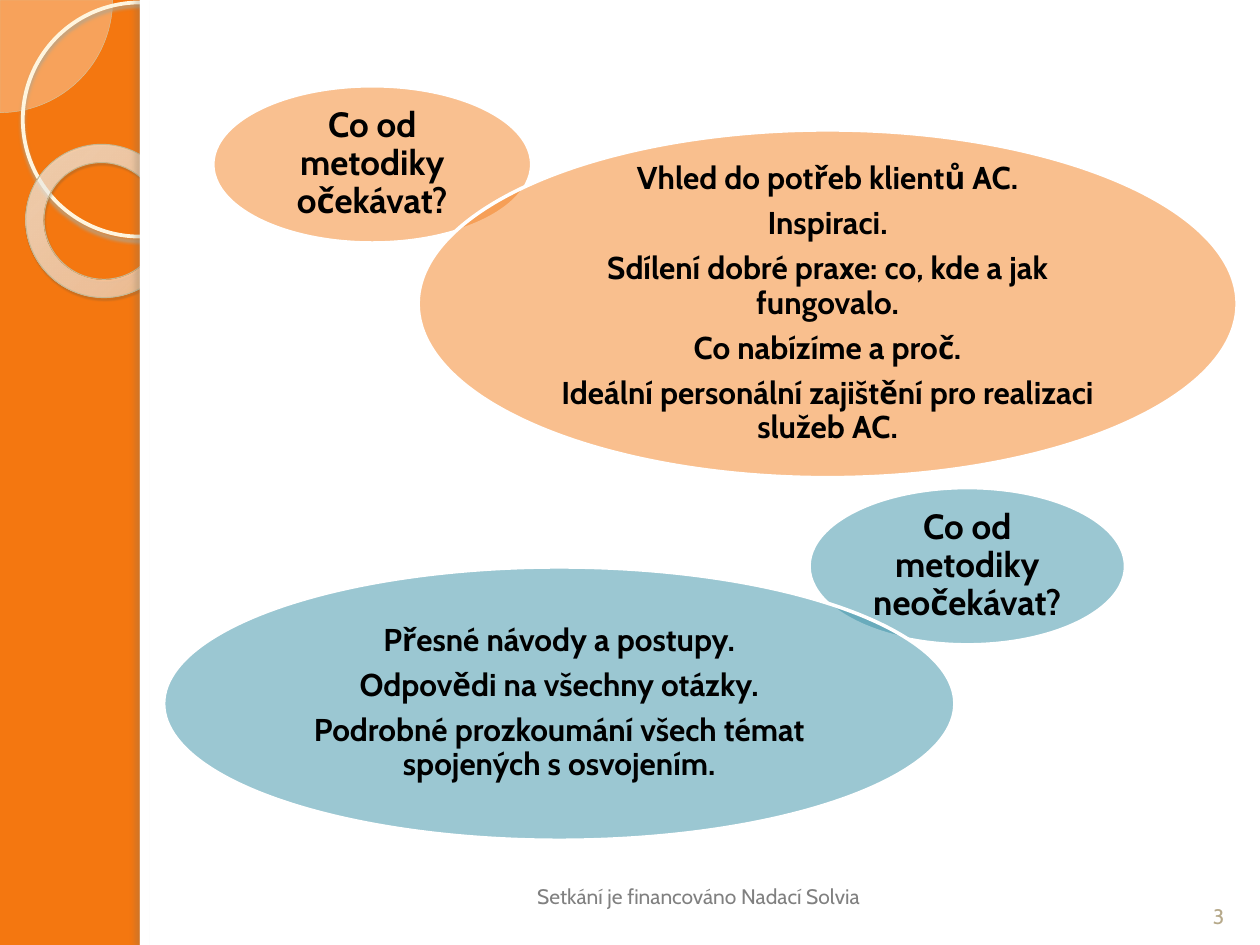
"""Build a slide with two question bubbles and their answers."""
from lxml import etree
from pptx import Presentation
from pptx.dml import color as dml
from pptx.enum import shapes, text
from pptx.oxml import ns
from pptx.util import Cm, Pt

KIND = shapes.MSO_SHAPE


def rgb(code):
    return dml.RGBColor.from_string(code)


def node(parent, tag, **attrs):
    return etree.SubElement(parent, ns.qn("a:" + tag), {k: str(v) for k, v in attrs.items()})


def tint(parent, code, alpha):
    node(node(parent, "srgbClr", val=code), "alpha", val=alpha * 1000)


class Deck:
    def __init__(self):
        self.font = "Cabin"
        self.prs = Presentation()
        self.prs.slide_width, self.prs.slide_height = Cm(25.4), Cm(19.05)
        self.slide = self.prs.slides.add_slide(self.prs.slide_layouts[6])

    def back(self, code):
        fill = self.slide.background.fill
        fill.solid()
        fill.fore_color.rgb = rgb(code)

    def shape(self, kind, box, fill=None, alpha=100, line=None, width=1):
        item = self.slide.shapes.add_shape(kind, *map(Cm, box))
        item.shadow.inherit = False
        if fill:
            item.fill.solid()
            item.fill.fore_color.rgb = rgb(fill)
            if alpha < 100:
                solid = item._element.spPr.find(ns.qn("a:solidFill"))
                node(solid[0], "alpha", val=alpha * 1000)
        else:
            item.fill.background()
        if line:
            item.line.color.rgb = rgb(line)
            item.line.width = Pt(width)
        else:
            item.line.fill.background()
        return item

    def shade(self, item, code, alpha, blur, dist, angle):
        effects = item._element.spPr.find(ns.qn("a:effectLst"))
        shadow = node(effects, "outerShdw", blurRad=Pt(blur), dist=Pt(dist),
                      dir=angle * 60000, algn="ctr", rotWithShape=0)
        tint(shadow, code, alpha)

    def glow(self, item, stops, rect):
        props = item._element.spPr
        grad = etree.Element(ns.qn("a:gradFill"), rotWithShape="1")
        ramp = node(grad, "gsLst")
        for pos, code, alpha in stops:
            tint(node(ramp, "gs", pos=pos * 1000), code, alpha)
        round_fill = node(grad, "path", path="circle")
        node(round_fill, "fillToRect", **{k: v * 1000 for k, v in zip("ltrb", rect)})
        props.replace(props.find(ns.qn("a:solidFill")), grad)

    def label(self, frame, lines, size, code, bold=False):
        frame.word_wrap = True
        for i, line in enumerate(lines):
            par = frame.paragraphs[0] if i == 0 else frame.add_paragraph()
            par.text = line
            par.alignment = text.PP_ALIGN.CENTER
            font = par.font
            font.name, font.size, font.bold = self.font, Pt(size), bold
            font.color.rgb = rgb(code)

    def bubble(self, box, fill, size, lines):
        item = self.shape(KIND.OVAL, box, fill, 50, "FFFFFF", 2)
        frame = item.text_frame
        frame.margin_left = frame.margin_right = frame.margin_top = frame.margin_bottom = 0
        frame.vertical_anchor = text.MSO_ANCHOR.MIDDLE
        self.label(frame, lines, size, "000000", True)
        for par in frame.paragraphs:
            par.line_spacing = 0.9
            par.space_after = Pt(size * 0.35)

    def note(self, box, line, code):
        frame = self.slide.shapes.add_textbox(*map(Cm, box)).text_frame
        frame.vertical_anchor = text.MSO_ANCHOR.BOTTOM
        self.label(frame, [line], 12, code)

    def decor(self):
        pie = self.shape(KIND.PIE, (-2.27, -2.27, 4.54, 4.54), "FEFAF4", 33, "D3C39F", 0.25)
        pie.adjustments[0], pie.adjustments[1] = 0, 54
        hoop = self.shape(KIND.OVAL, (0.46, 0.05, 4.72, 4.72), line="FFF5DE", width=2.15)
        self.shade(hoop, "B0A68F", 85, 2, 2, 90)
        ring = self.shape(KIND.DONUT, (0.51, 2.92, 3.12, 3.07), "FFFCF6", line="C7B893", width=0.58)
        ring.adjustments[0] = 0.12
        ring.rotation = 38.6
        stops = [(0, "FFFCF6", 70), (70, "FFFEFB", 55), (100, "F0D28E", 60)]
        self.glow(ring, stops, (-408, -50, 508, 150))
        self.shade(ring, "5A5444", 35, 1, 1.2, 75)
        self.shape(KIND.RECTANGLE, (2.82, 0, 22.58, 19.05), "FFFFFF")
        edge = self.shape(KIND.RECTANGLE, (2.82, 0, 0.2, 19.05), "FFFFFF")
        self.shade(edge, "736F63", 25, 3, 3, 180)


def main():
    deck = Deck()
    deck.back("F47710")
    deck.decor()
    deck.bubble((4.29, 1.73, 6.43, 3.17), "F58223", 20, ["Co od metodiky očekávat?"])
    deck.note((8.89, 17.12, 10.39, 1.32), "Setkání je financováno Nadací Solvia", "808080")
    deck.note((23.93, 17.53, 1.27, 1.32), "3", "B6A98A")
    deck.bubble((8.43, 2.62, 16.51, 7.01), "F5801F", 18, [
        "Vhled do potřeb klientů AC.",
        "Inspiraci.",
        "Sdílení dobré praxe: co, kde a jak fungovalo.",
        "Co nabízíme a proč.",
        "Ideální personální zajištění pro realizaci služeb AC.",
    ])
    deck.bubble((16.31, 9.83, 6.38, 3.17), "3891A7", 20, ["Co od metodiky neočekávat?"])
    deck.bubble((3.3, 11.43, 15.95, 5.51), "3891A7", 18, [
        "Přesné návody a postupy.",
        "Odpovědi na všechny otázky.",
        "Podrobné prozkoumání všech témat spojených s osvojením.",
    ])
    deck.prs.save("out.pptx")


if __name__ == "__main__":
    main()
